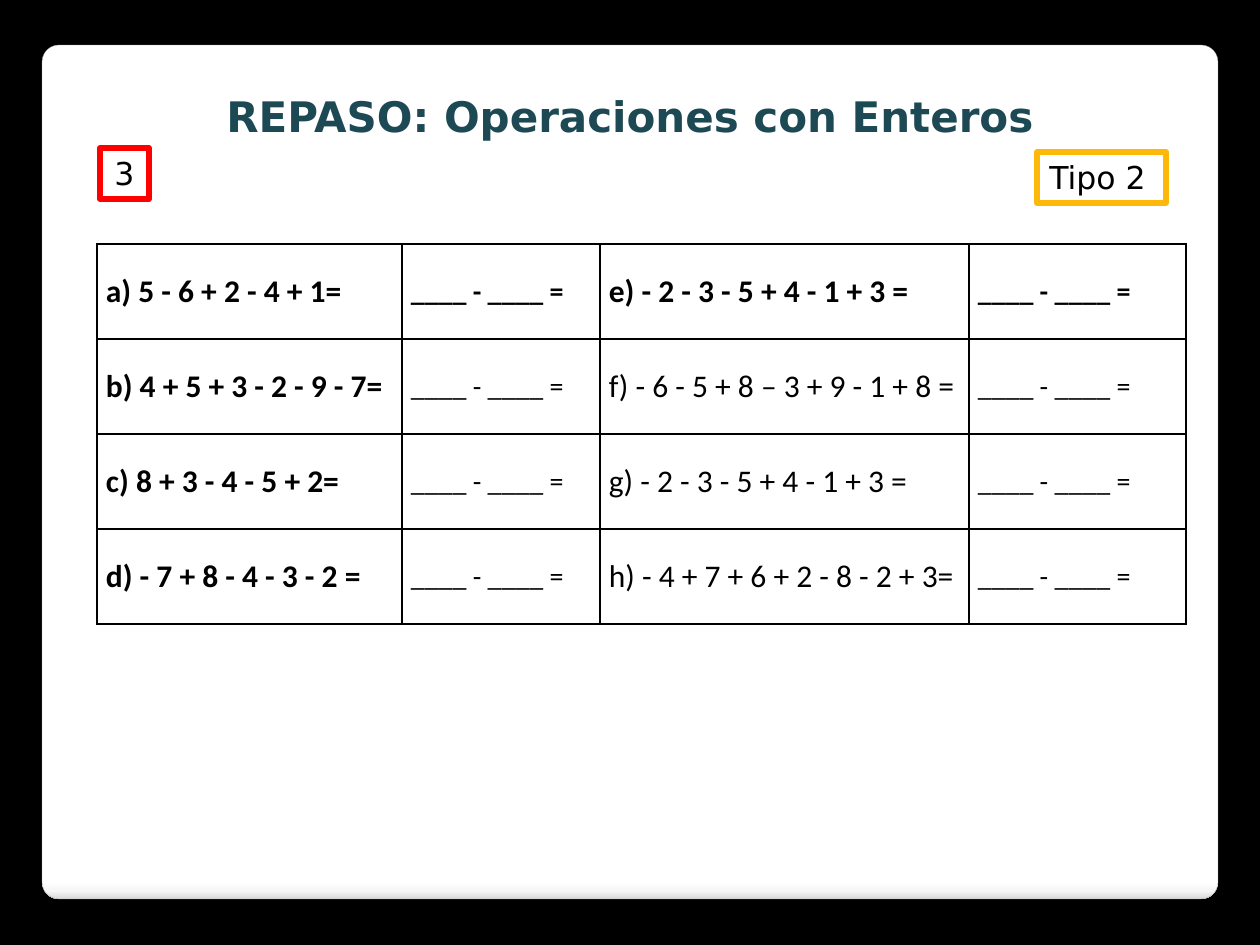
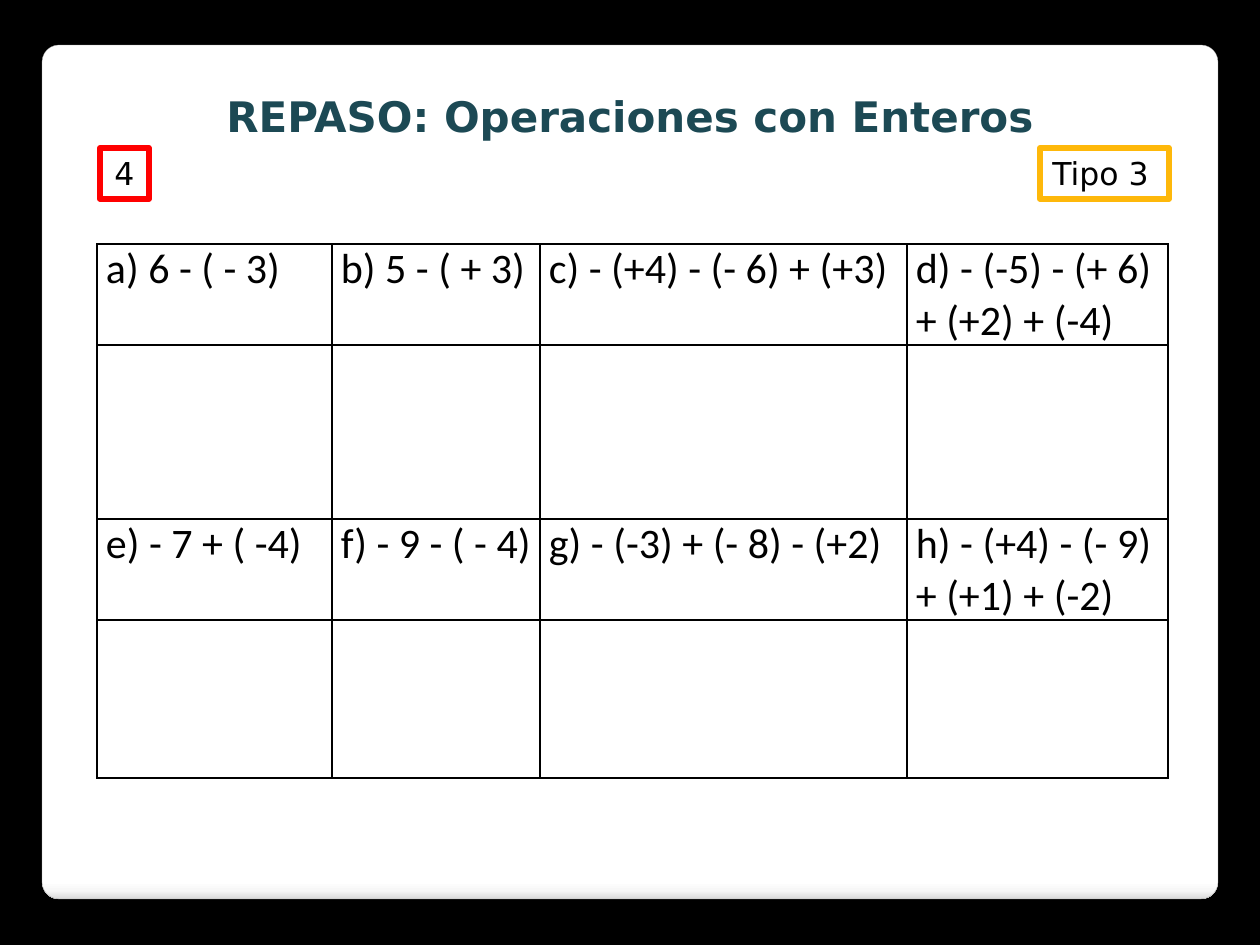
from dataclasses import dataclass

from lxml import etree
from pptx import Presentation
from pptx.dml.color import RGBColor
from pptx.enum.shapes import MSO_SHAPE
from pptx.enum.text import MSO_ANCHOR, PP_ALIGN
from pptx.oxml import parse_xml
from pptx.oxml.ns import nsdecls, qn
from pptx.util import Emu, Pt

RECTANGLE = MSO_SHAPE.RECTANGLE
ROUNDED = MSO_SHAPE.ROUNDED_RECTANGLE
LEFT, CENTER = PP_ALIGN.LEFT, PP_ALIGN.CENTER
TOP, MIDDLE = MSO_ANCHOR.TOP, MSO_ANCHOR.MIDDLE


@dataclass(frozen=True)
class Theme:
    black: str = "000000"
    white: str = "FFFFFF"
    title: str = "1C4954"
    number: str = "FF0000"
    kind: str = "FEB80A"
    panel_edge: str = "A4A4A4"
    panel_stops: tuple = ((0, "FFFFFF"), (98, "FFFFFF"), (99, "F7F7F7"), (100, "DADADA"))
    heading_font: str = "DejaVu Sans"
    table_font: str = "Calibri"
    title_size: int = 24
    badge_size: int = 18
    exercise_size: int = 18
    answer_size: int = 16
    large_size: int = 24


THEME = Theme()
ANSWER = "____ - ____ ="


def px(length):
    return Emu(round(length * 914400 / 126))


def rgb(code):
    return RGBColor.from_string(code)


def write(frame, text, font, size, color, align=LEFT, bold=False):
    paragraph = frame.paragraphs[0]
    paragraph.text = text
    paragraph.alignment = align
    style = paragraph.runs[0].font
    style.name, style.size, style.bold = font, Pt(size), bold
    style.color.rgb = rgb(color)
    return paragraph


def add_panel(slide, box):
    panel = slide.shapes.add_shape(ROUNDED, *map(px, box))
    panel.adjustments[0] = 0.02
    panel.shadow.inherit = False
    panel.line.color.rgb = rgb(THEME.panel_edge)
    panel.line.width = Pt(0.16)
    panel.fill.gradient()
    panel.fill.gradient_angle = 270
    stops = panel.element.spPr.find(qn("a:gradFill")).find(qn("a:gsLst"))
    for stop in list(stops):
        stops.remove(stop)
    for percent, color in THEME.panel_stops:
        stop = etree.SubElement(stops, qn("a:gs"), pos=str(percent * 1000))
        etree.SubElement(stop, qn("a:srgbClr"), val=color)


def add_title(slide, box, text):
    title = slide.shapes.add_textbox(*map(px, box))
    title.text_frame.word_wrap = True
    write(title.text_frame, text, THEME.heading_font, THEME.title_size,
          THEME.title, CENTER, True)


def add_badge(slide, box, text, edge, align):
    badge = slide.shapes.add_shape(RECTANGLE, *map(px, box))
    badge.shadow.inherit = False
    badge.fill.solid()
    badge.fill.fore_color.rgb = rgb(THEME.white)
    badge.line.color.rgb = rgb(edge)
    badge.line.width = Pt(3.35)
    badge.text_frame.word_wrap = True
    badge.text_frame.vertical_anchor = TOP
    write(badge.text_frame, text, THEME.heading_font, THEME.badge_size,
          THEME.black, align)


def style_cell(cell, tinted):
    cell.margin_left = cell.margin_right = px(9)
    cell.margin_top = cell.margin_bottom = 0
    if tinted:
        cell.fill.solid()
        cell.fill.fore_color.rgb = rgb(THEME.white)
    else:
        cell.fill.background()
    properties = cell._tc.get_or_add_tcPr()
    if tinted:
        color = properties.find(qn("a:solidFill")).find(qn("a:srgbClr"))
        etree.SubElement(color, qn("a:alpha"), val="20000")
    for position, side in enumerate(("lnL", "lnR", "lnT", "lnB")):
        properties.insert(position, parse_xml(
            f'<a:{side} {nsdecls("a")} w="12700"><a:solidFill>'
            f'<a:srgbClr val="{THEME.black}"/></a:solidFill></a:{side}>'))


def add_exercises(slide, origin, widths, heights, rows, size, anchor, emphasis):
    box = (*origin, sum(widths), sum(heights))
    table = slide.shapes.add_table(len(heights), len(widths), *map(px, box)).table
    table.first_row = table.horz_banding = False
    for column, width in zip(table.columns, widths):
        column.width = px(width)
    for row, height in zip(table.rows, heights):
        row.height = px(height)
    for r, texts in enumerate(rows):
        for c, text in enumerate(texts):
            cell = table.cell(r, c)
            style_cell(cell, r % 2 == 1)
            cell.vertical_anchor = anchor
            if text:
                bold = emphasis and (r == 0 or c == 0)
                text_size = THEME.answer_size if text == ANSWER else size
                paragraph = write(cell.text_frame, text, THEME.table_font,
                                  text_size, THEME.black, bold=bold)
                paragraph.space_before = paragraph.space_after = Pt(6)


def add_review_slide(prs, number, kind, kind_origin):
    slide = prs.slides.add_slide(prs.slide_layouts[6])
    slide.background.fill.solid()
    slide.background.fill.fore_color.rgb = rgb(THEME.black)
    add_panel(slide, (42, 45, 1176, 854))
    add_title(slide, (49, 84, 1162, 63), "REPASO: Operaciones con Enteros")
    add_badge(slide, (*kind_origin, 129, 51), kind, THEME.kind, LEFT)
    add_badge(slide, (100, 148, 49, 51), number, THEME.number, CENTER)
    return slide


def main():
    prs = Presentation()
    prs.slide_width, prs.slide_height = px(1260), px(945)
    table_origin = (97, 244)

    sums = add_review_slide(prs, "3", "Tipo 2", (1037, 152))
    exercise_pairs = (
        ("a) 5 - 6 + 2 - 4 + 1=", "e) - 2 - 3 - 5 + 4 - 1 + 3 ="),
        ("b) 4 + 5 + 3 - 2 - 9 - 7=", "f) - 6 - 5 + 8 – 3 + 9 - 1 + 8 ="),
        ("c) 8 + 3 - 4 - 5 + 2=", "g) - 2 - 3 - 5 + 4 - 1 + 3 ="),
        ("d) - 7 + 8 - 4 - 3 - 2 =", "h) - 4 + 7 + 6 + 2 - 8 - 2 + 3="),
    )
    sum_rows = [(first, ANSWER, second, ANSWER) for first, second in exercise_pairs]
    add_exercises(sums, table_origin, (305, 198, 369, 217), [95] * 4, sum_rows,
                  THEME.exercise_size, MIDDLE, True)

    brackets = add_review_slide(prs, "4", "Tipo 3", (1040, 148))
    work_space = ("",) * 4
    bracket_rows = (
        ("a) 6 - ( - 3)", "b) 5 - ( + 3)", "c) - (+4) - (- 6) + (+3)",
         "d) - (-5) - (+ 6) + (+2) + (-4)"),
        work_space,
        ("e) - 7 + ( -4)", "f) - 9 - ( - 4)", "g) - (-3) + (- 8) - (+2)",
         "h) - (+4) - (- 9) + (+1) + (-2)"),
        work_space,
    )
    add_exercises(brackets, table_origin, (235, 208, 367, 261), (101, 174, 101, 158),
                  bracket_rows, THEME.large_size, TOP, False)

    prs.save("out.pptx")


if __name__ == "__main__":
    main()
